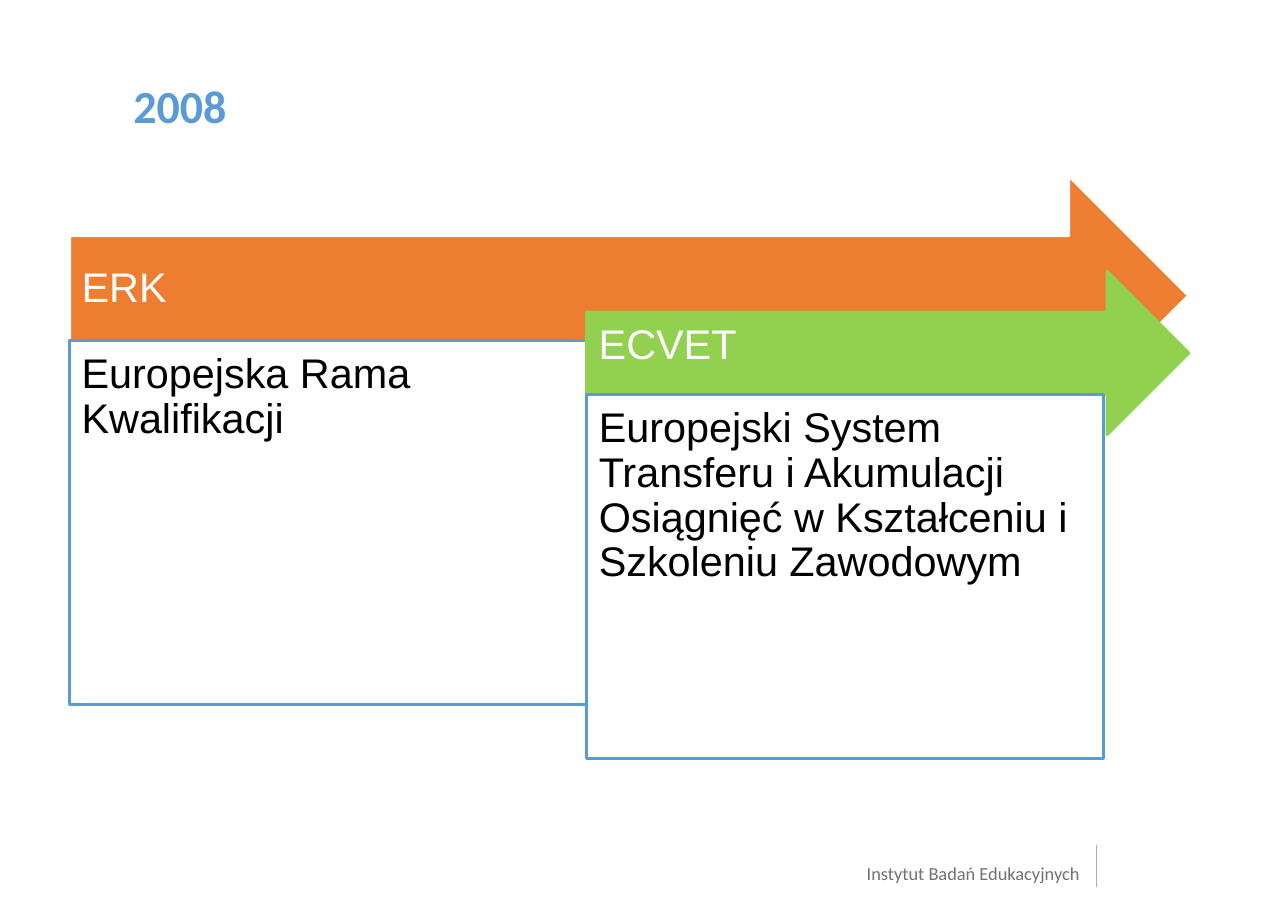
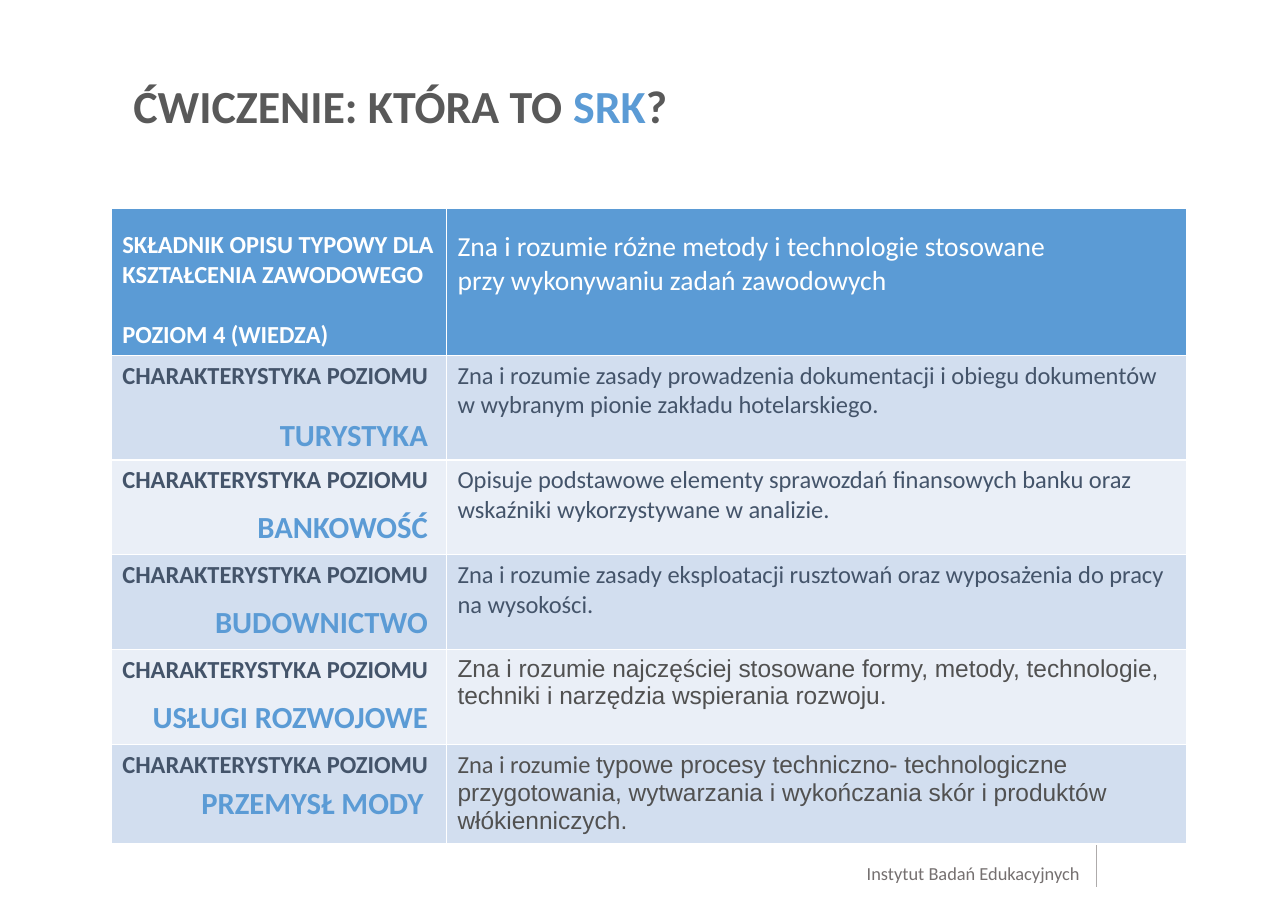
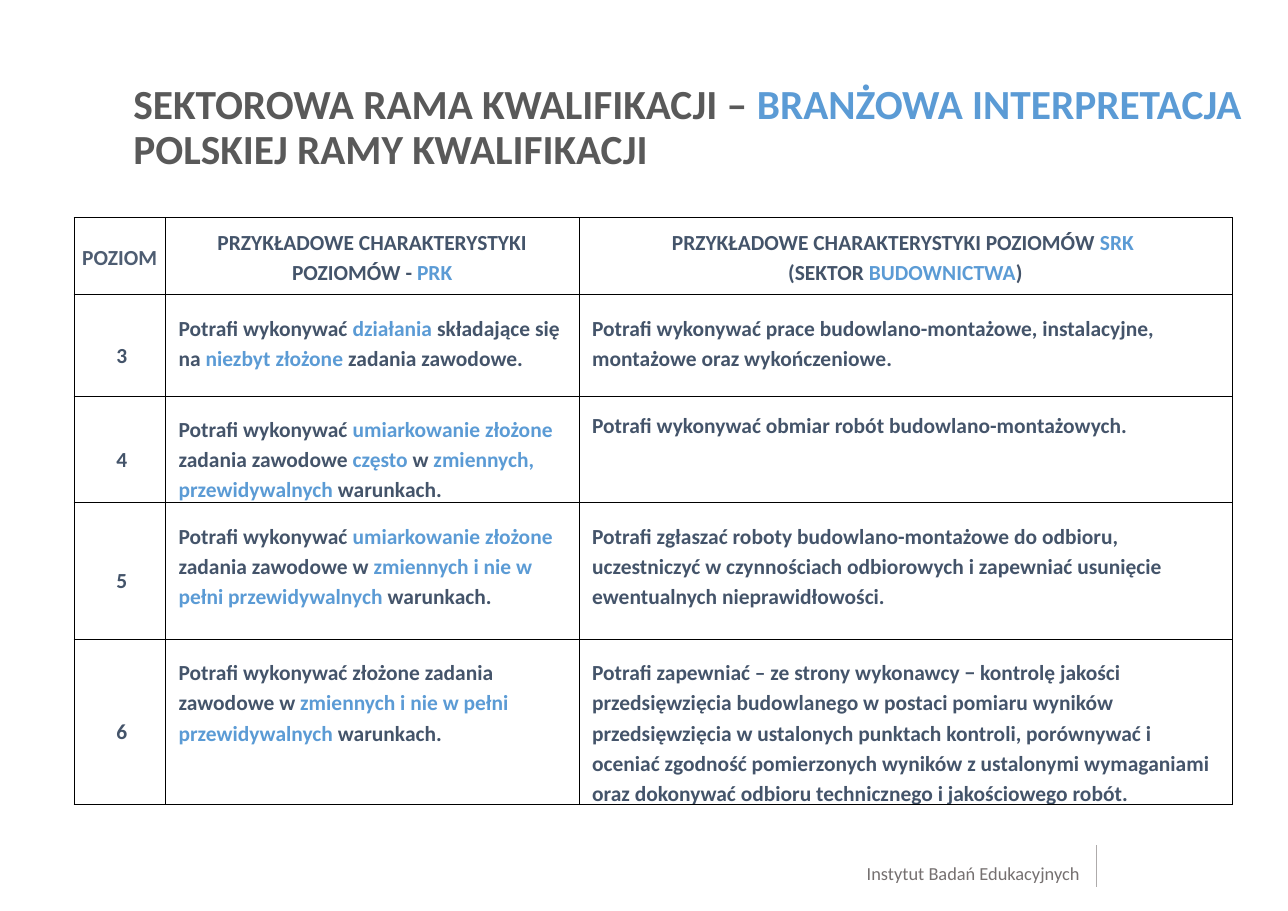
from lxml import etree
from pptx import Presentation
from pptx.dml.color import RGBColor
from pptx.enum.shapes import MSO_CONNECTOR, MSO_SHAPE
from pptx.enum.text import MSO_ANCHOR as Anchor, PP_ALIGN as Align
from pptx.oxml.ns import qn
from pptx.util import Inches, Pt

WHITE = RGBColor(0xFF, 0xFF, 0xFF)
BLACK = RGBColor(0, 0, 0)
BLUE = RGBColor(0x5B, 0x9B, 0xD5)
ORANGE = RGBColor(0xED, 0x7D, 0x31)
GREEN = RGBColor(0x92, 0xD0, 0x50)
TITLE_GREY = RGBColor(0x59, 0x59, 0x59)
TEXT_GREY = RGBColor(0x51, 0x51, 0x51)
FOOTER_GREY = RGBColor(0x75, 0x70, 0x70)
RULE_GREY = RGBColor(0xAE, 0xAB, 0xAB)
SLATE = RGBColor(0x44, 0x54, 0x6A)
LIGHT_SLATE = RGBColor(0x4E, 0x5D, 0x72)
BAND_DARK = RGBColor(0xD2, 0xDE, 0xEF)
BAND_LIGHT = RGBColor(0xEA, 0xEF, 0xF7)

TITLE_BOX = (1.21, 0.76, 10.07, 0.85)
FOOTER_BOX = (7.86, 7.82, 1.95, 0.21)
NO_MARGINS = (0, 0, 0, 0)

STEPS = [
    ("ERK", "Europejska Rama Kwalifikacji", ORANGE, WHITE,
     (0.63, 1.59, 10.15, 2.18), (0.63, 3.09, 4.69, 3.3)),
    ("ECVET",
     "Europejski System Transferu i Akumulacji Osiągnięć w Kształceniu i Szkoleniu Zawodowym",
     GREEN, GREEN, (5.32, 2.46, 5.46, 1.48), (5.32, 3.58, 4.69, 3.3)),
]

LEVEL_LABEL = "CHARAKTERYSTYKA POZIOMU"
SECTOR_DESCRIPTIONS = [
    [("Zna i rozumie zasady prowadzenia dokumentacji i obiegu dokumentów "
      "w wybranym pionie zakładu hotelarskiego.", SLATE, "Calibri")],
    [("Opisuje podstawowe elementy sprawozdań finansowych banku oraz "
      "wskaźniki wykorzystywane w analizie.", SLATE, "Calibri")],
    [("Zna i rozumie zasady eksploatacji rusztowań oraz wyposażenia do pracy "
      "na wysokości.", SLATE, "Calibri")],
    [("Zna i rozumie najczęściej stosowane formy, metody, technologie, "
      "techniki i narzędzia wspierania rozwoju.", TEXT_GREY, "Arial")],
    [("Zna i rozumie ", TEXT_GREY, "Calibri"),
     ("typowe procesy techniczno- technologiczne przygotowania, wytwarzania "
      "i wykończania skór i produktów włókienniczych.", TEXT_GREY, "Arial")],
]
SECTORS = [
    ("TURYSTYKA", (2.42, 3.72, 1.56, 0.44)),
    ("BANKOWOŚĆ", (2.22, 4.56, 1.76, 0.44)),
    ("BUDOWNICTWO", (1.83, 5.42, 2.15, 0.44)),
    ("USŁUGI ROZWOJOWE", (1.26, 6.28, 2.72, 0.44)),
    ("PRZEMYSŁ MODY", (1.69, 7.06, 2.25, 0.44)),
]

LEVEL_ROWS = [
    ("POZIOM",
     "PRZYKŁADOWE CHARAKTERYSTYKI POZIOMÓW - *PRK*",
     "PRZYKŁADOWE CHARAKTERYSTYKI POZIOMÓW *SRK *\n(SEKTOR *BUDOWNICTWA*)"),
    ("3",
     "Potrafi wykonywać *działania *składające się na *niezbyt złożone *zadania zawodowe.",
     "Potrafi wykonywać prace budowlano-montażowe, instalacyjne, montażowe oraz wykończeniowe."),
    ("4",
     "Potrafi wykonywać *umiarkowanie złożone *zadania zawodowe *często *w* zmiennych, "
     "przewidywalnych *warunkach.",
     "Potrafi wykonywać obmiar robót budowlano-montażowych."),
    ("5",
     "Potrafi wykonywać *umiarkowanie złożone *zadania zawodowe w *zmiennych i nie "
     "w pełni przewidywalnych *warunkach.",
     "Potrafi zgłaszać roboty budowlano-montażowe do odbioru, uczestniczyć w czynnościach "
     "odbiorowych i zapewniać usunięcie ewentualnych nieprawidłowości."),
    ("6",
     "Potrafi wykonywać złożone zadania zawodowe w *zmiennych i nie w pełni "
     "przewidywalnych *warunkach.",
     "Potrafi zapewniać – ze strony wykonawcy − kontrolę jakości przedsięwzięcia budowlanego "
     "w postaci pomiaru wyników przedsięwzięcia w ustalonych punktach kontroli, porównywać "
     "i oceniać zgodność pomierzonych wyników z ustalonymi wymaganiami oraz dokonywać odbioru "
     "technicznego i jakościowego robót."),
]


def inches(values):
    """Turn a sequence of numbers into lengths."""
    return [Inches(value) for value in values]


def write(paragraph, text, size, color, bold=False, font="Calibri",
          align=Align.LEFT, spacing=1.0):
    """Append text to a paragraph, with the parts between asterisks in blue."""
    paragraph.alignment = align
    paragraph.line_spacing = spacing
    for part_no, part in enumerate(text.split("*")):
        for line_no, line in enumerate(part.split("\n")):
            if line_no:
                paragraph.add_line_break()
            if line:
                run = paragraph.add_run()
                run.text = line
                run.font.name = font
                run.font.size = Pt(size)
                run.font.bold = bold
                run.font.color.rgb = BLUE if part_no % 2 else color


def set_margins(holder, margins):
    """Set the left, top, right and bottom margins of a frame or cell."""
    (holder.margin_left, holder.margin_top,
     holder.margin_right, holder.margin_bottom) = inches(margins)


def add_text(slide, box, text, size, color, margins=(0.1, 0.05, 0.1, 0.05),
             wrap=True, **style):
    """Place one paragraph in a text box."""
    frame = slide.shapes.add_textbox(*inches(box)).text_frame
    frame.word_wrap = wrap
    set_margins(frame, margins)
    write(frame.paragraphs[0], text, size, color, **style)


def add_panel(slide, kind, box, fill, line, text, color, margins, anchor):
    """Place a filled and outlined shape with its text."""
    panel = slide.shapes.add_shape(kind, *inches(box))
    panel.shadow.inherit = False
    panel.fill.solid()
    panel.fill.fore_color.rgb = fill
    panel.line.color.rgb = line
    panel.line.width = Pt(2)
    frame = panel.text_frame
    frame.word_wrap = True
    frame.vertical_anchor = anchor
    set_margins(frame, margins)
    write(frame.paragraphs[0], text, 27, color, font="Arial", spacing=0.9)


def add_footer(slide):
    """Place the institute name and the thin rule beside it."""
    add_text(slide, FOOTER_BOX, "Instytut Badań Edukacyjnych", 12, FOOTER_GREY,
             NO_MARGINS, wrap=False)
    rule = slide.shapes.add_connector(
        MSO_CONNECTOR.STRAIGHT, *inches((9.94, 8.04, 9.94, 7.66)))
    rule.line.color.rgb = RULE_GREY
    rule.line.width = Pt(0.75)
    etree.SubElement(rule._element.spPr, qn("a:effectLst"))


def start_slide(deck, title, size=30):
    """Add a blank slide with the shared footer and title."""
    slide = deck.slides.add_slide(deck.slide_layouts[6])
    add_footer(slide)
    add_text(slide, TITLE_BOX, title, size, TITLE_GREY, NO_MARGINS,
             bold=True, spacing=0.9)
    return slide


def set_borders(cell, color, width):
    """Draw the four borders of a cell."""
    properties = cell._tc.get_or_add_tcPr()
    for side in ("a:lnL", "a:lnR", "a:lnT", "a:lnB"):
        line = etree.SubElement(properties, qn(side), w=str(Pt(width)))
        fill = etree.SubElement(line, qn("a:solidFill"))
        etree.SubElement(fill, qn("a:srgbClr"), val=str(color))


def add_grid(slide, left, top, columns, rows, border, width):
    """Place an unstyled table with the given column widths and row heights."""
    box = inches((left, top, sum(columns), sum(rows)))
    table = slide.shapes.add_table(len(rows), len(columns), *box).table
    table.first_row = table.horz_banding = False
    for column, size in zip(table.columns, columns):
        column.width = Inches(size)
    for row, size in zip(table.rows, rows):
        row.height = Inches(size)
    for cell in table.iter_cells():
        set_borders(cell, border, width)
        cell.fill.background()
    return table


def add_sector_table(slide, left, top):
    """Place the table of sector descriptions for level 4."""
    table = add_grid(slide, left, top, (3.04, 6.71), (1.33, 0.95) + (0.86,) * 4, WHITE, 1)
    fills = [BLUE] + [BAND_LIGHT if row % 2 else BAND_DARK for row in range(5)]
    for row, fill in zip(table.rows, fills):
        for cell in row.cells:
            cell.fill.solid()
            cell.fill.fore_color.rgb = fill
    component, description = table.rows[0].cells
    for cell in (component, description):
        set_margins(cell, (0.1, 0.2, 0.1, 0.05))
    write(component.text_frame.paragraphs[0],
          "SKŁADNIK OPISU TYPOWY DLA KSZTAŁCENIA ZAWODOWEGO", 16, WHITE, bold=True)
    level = component.text_frame.add_paragraph()
    write(level, "POZIOM 4 (WIEDZA)", 16, WHITE, bold=True)
    level.space_before = Pt(19.5)
    write(description.text_frame.paragraphs[0],
          "Zna i rozumie różne metody i technologie stosowane \n"
          "przy wykonywaniu zadań zawodowych", 18, WHITE)
    for row_no, parts in enumerate(SECTOR_DESCRIPTIONS, 1):
        label, description = (table.cell(row_no, col).text_frame.paragraphs[0]
                              for col in range(2))
        write(label, LEVEL_LABEL, 16, SLATE, bold=True)
        for text, color, font in parts:
            write(description, text, 16, color, font=font)


def add_level_table(slide, left, top):
    """Place the table comparing level descriptions of both frameworks."""
    table = add_grid(slide, left, top, (0.83, 3.75, 5.92),
                     (0.7, 0.92, 0.92, 1.24, 1.34), BLACK, 0.25)
    for row_no, texts in enumerate(LEVEL_ROWS):
        for col_no, text in enumerate(texts):
            cell = table.cell(row_no, col_no)
            header = row_no == 0
            centred = header or col_no == 0
            set_margins(cell, (0.07, 0, 0.07, 0) if header else (0.12, 0.16, 0.08, 0))
            cell.vertical_anchor = Anchor.MIDDLE if centred else Anchor.TOP
            write(cell.text_frame.paragraphs[0], text, 14,
                  LIGHT_SLATE if text == "POZIOM" else SLATE, bold=True,
                  align=Align.CENTER if centred else Align.LEFT,
                  spacing=1.0 if (row_no, col_no) == (2, 2) else 1.15)


def build_timeline(deck):
    """Build the slide with the two overlapping arrows."""
    slide = start_slide(deck, "*2008*")
    for name, meaning, fill, line, arrow_box, body_box in STEPS:
        add_panel(slide, MSO_SHAPE.RIGHT_ARROW, arrow_box, fill, line, name, WHITE,
                  (0.11, 0.11, 0.28, 0.23), Anchor.MIDDLE)
        add_panel(slide, MSO_SHAPE.RECTANGLE, body_box, WHITE, BLUE, meaning, BLACK,
                  (0.11,) * 4, Anchor.TOP)


def build_exercise(deck):
    """Build the exercise slide with the sector answers over the table."""
    slide = start_slide(deck, "ĆWICZENIE: KTÓRA TO *SRK*?")
    add_sector_table(slide, 1.01, 1.89)
    for sector, box in SECTORS:
        add_text(slide, box, sector, 20, BLUE, wrap=False, bold=True, align=Align.RIGHT)


def build_comparison(deck):
    """Build the slide comparing the two qualification frameworks."""
    slide = start_slide(
        deck,
        "SEKTOROWA RAMA KWALIFIKACJI – *BRANŻOWA INTERPRETACJA* POLSKIEJ RAMY KWALIFIKACJI",
        27)
    add_level_table(slide, 0.67, 1.97)


def main():
    """Build and save the deck."""
    deck = Presentation()
    deck.slide_width, deck.slide_height = inches((11.68, 8.26))
    build_timeline(deck)
    build_exercise(deck)
    build_comparison(deck)
    deck.save("out.pptx")


if __name__ == "__main__":
    main()
